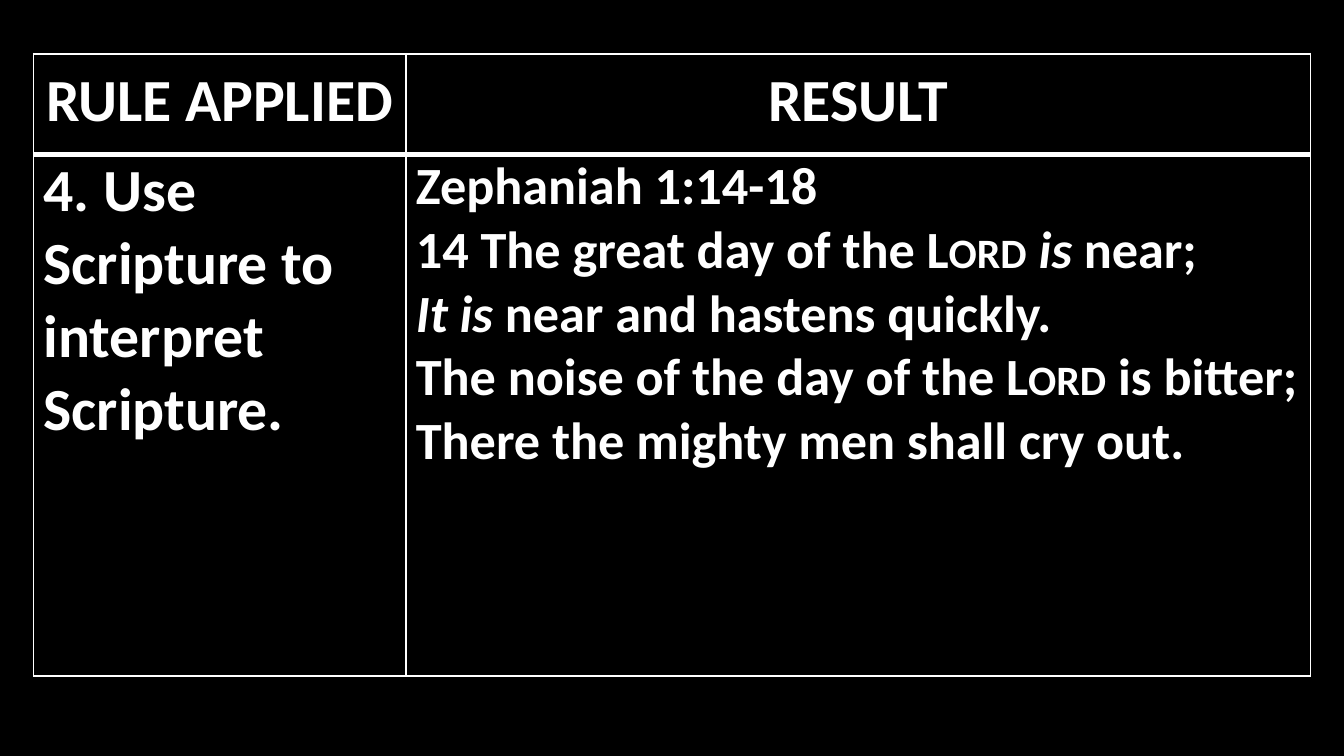
import pptx
import pptx.util
import pptx.dml.color
import pptx.enum.text
import pptx.oxml
import pptx.oxml.ns
from pptx.util import Inches

COLORS = {"background": "000000", "text": "FFFFFF", "border": "FFFFFF"}
FONT = "Calibri"
SLIDE_WIDTH = 10
COL_WIDTHS = [2.77, 6.73]
ROW_HEIGHTS = [0.75, 3.88]

# Each paragraph is a list of (text, style); "\n" is a line break
HEADERS = ["RULE APPLIED", "RESULT"]
RULE = [[("4. Use Scripture to interpret Scripture.", "")]]
RESULT = [
    [("Zephaniah 1:14-18", "")],
    [
        ("14\u00a0The great day of the ", ""), ("Lord", "small"),
        (" is", "italic"), (" near;", ""), ("\n", ""),
        ("It is", "italic"), (" near and hastens quickly.", ""), ("\n", ""),
        ("The noise of the day of the ", ""), ("Lord", "small"),
        (" is bitter;", ""), ("\n", ""),
        ("There the mighty men shall cry out.", ""),
    ],
]


def rgb(name):
    return pptx.dml.color.RGBColor.from_string(COLORS[name])


def add_run(p, text, size, style=""):
    r = p.add_run()
    r.text = text
    r.font.name = FONT
    r.font.size = pptx.util.Pt(size)
    r.font.bold = True
    r.font.italic = style == "italic"
    r.font.color.rgb = rgb("text")
    if style == "small":
        r._r.get_or_add_rPr().set("cap", "small")


def set_borders(cell, top, bottom):
    tcPr = cell._tc.get_or_add_tcPr()
    widths = {"lnL": 1, "lnR": 1, "lnT": top, "lnB": bottom}
    for i, (tag, width) in enumerate(widths.items()):
        ln = pptx.oxml.parse_xml(
            f'<a:{tag} {pptx.oxml.ns.nsdecls("a")} w="{pptx.util.Pt(width)}">'
            f'<a:solidFill><a:srgbClr val="{COLORS["border"]}"/></a:solidFill>'
            f'</a:{tag}>')
        tcPr.insert(i, ln)  # borders come before the fill


def fill_cell(cell, paragraphs, size, header=False):
    cell.fill.background()
    cell.margin_left = cell.margin_right = pptx.util.Pt(5.4)
    cell.margin_top = cell.margin_bottom = 0
    tf = cell.text_frame
    for i, runs in enumerate(paragraphs):
        p = tf.paragraphs[0] if i == 0 else tf.add_paragraph()
        if header:
            p.alignment = pptx.enum.text.PP_ALIGN.CENTER
            p.line_spacing = 1.15
        for text, style in runs:
            if text == "\n":
                p.add_line_break()
            else:
                add_run(p, text, size, style)
    # The thick rule lies between the header and the body
    set_borders(cell, *((1, 3) if header else (3, 1)))


def add_table(s):
    table = s.shapes.add_table(
        len(ROW_HEIGHTS), len(COL_WIDTHS), Inches(0.25), Inches(0.4),
        Inches(sum(COL_WIDTHS)), Inches(sum(ROW_HEIGHTS))).table
    for col, width in zip(table.columns, COL_WIDTHS):
        col.width = Inches(width)
    for row, height in zip(table.rows, ROW_HEIGHTS):
        row.height = Inches(height)
    return table


def main():
    prs = pptx.Presentation()
    # Widescreen, 16:9
    prs.slide_width = Inches(SLIDE_WIDTH)
    prs.slide_height = Inches(SLIDE_WIDTH * 9 / 16)
    s = prs.slides.add_slide(prs.slide_layouts[6])
    s.background.fill.solid()
    s.background.fill.fore_color.rgb = rgb("background")

    # Header row
    table = add_table(s)
    for i, title in enumerate(HEADERS):
        fill_cell(table.cell(0, i), [[(title, "")]], 32, header=True)

    # Rule and its result
    fill_cell(table.cell(1, 0), RULE, 32)
    fill_cell(table.cell(1, 1), RESULT, 28)

    prs.save("out.pptx")


if __name__ == "__main__":
    main()
